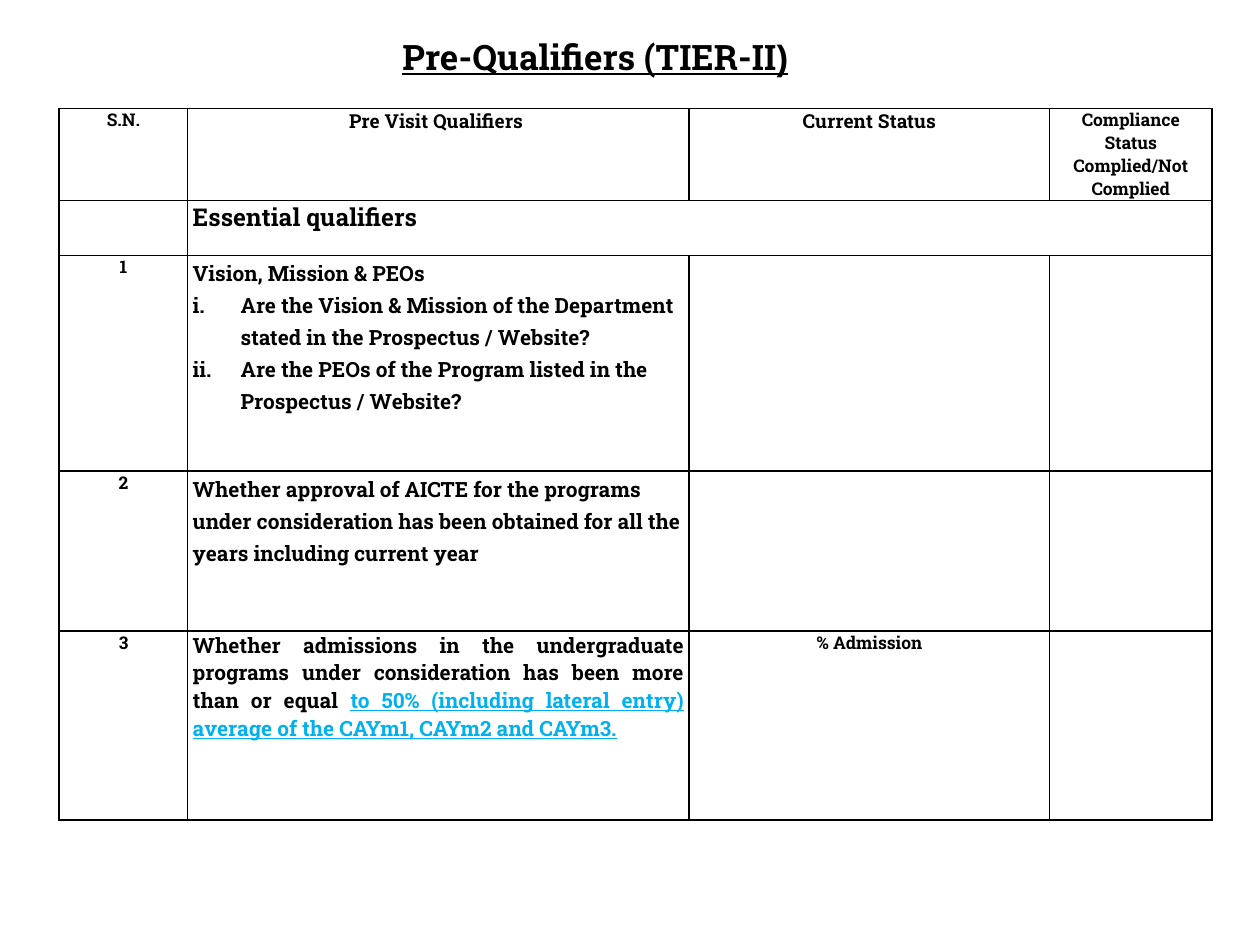
from lxml.etree import SubElement
from pptx import Presentation
from pptx.dml.color import RGBColor
from pptx.enum.text import MSO_ANCHOR, MSO_AUTO_SIZE, PP_ALIGN
from pptx.oxml import parse_xml
from pptx.oxml.ns import nsdecls, qn
from pptx.util import Inches, Pt

BLACK = RGBColor(0x00, 0x00, 0x00)
SKY_BLUE = RGBColor(0x00, 0xB0, 0xF0)
FONT = "Roboto Slab"
COLUMN_WIDTHS = (1.02, 3.98, 2.86, 1.29)
ROW_HEIGHTS = (0.73, 0.44, 1.71, 1.27, 1.5)
LIST_INDENT = Inches(0.38)


def add_run(paragraph, text, size, color=BLACK, underline=False, font=FONT):
    run = paragraph.add_run()
    run.text = text
    run.font.name = font
    run.font.size = Pt(size)
    run.font.bold = True
    run.font.underline = underline
    run.font.color.rgb = color


def number_paragraph(paragraph):
    """Give the paragraph a hanging lower-case Roman number."""
    properties = paragraph._p.get_or_add_pPr()
    properties.set("marL", str(LIST_INDENT))
    properties.set("indent", str(-LIST_INDENT))
    SubElement(properties, qn("a:buFont"), typeface="+mj-lt")
    SubElement(properties, qn("a:buAutoNum"), type="romanLcPeriod")


def format_cell(cell):
    """Clear the fill, tighten the margins and rule all four sides."""
    cell.fill.background()
    cell.margin_left = cell.margin_right = Inches(0.04)
    cell.margin_top = cell.margin_bottom = 0
    properties = cell._tc.get_or_add_tcPr()
    for position, side in enumerate(("lnL", "lnR", "lnT", "lnB")):
        properties.insert(position, parse_xml(
            f'<a:{side} {nsdecls("a")} w="{Pt(1)}"><a:solidFill>'
            f'<a:srgbClr val="{BLACK}"/></a:solidFill></a:{side}>'))


def write_cell(cell, lines, size, alignment=PP_ALIGN.CENTER, spacing=None):
    """Write one paragraph per line and return the paragraphs."""
    frame = cell.text_frame
    for index, line in enumerate(lines):
        paragraph = frame.add_paragraph() if index else frame.paragraphs[0]
        paragraph.alignment = alignment
        if spacing:
            paragraph.line_spacing = spacing
        add_run(paragraph, line, size)
    return frame.paragraphs


def add_title(slide, left, top, width, height):
    title = slide.shapes.title
    title.left, title.top, title.width, title.height = map(
        Inches, (left, top, width, height))
    frame = title.text_frame
    frame.auto_size = MSO_AUTO_SIZE.NONE
    frame.vertical_anchor = MSO_ANCHOR.TOP
    paragraph = frame.paragraphs[0]
    paragraph.alignment = PP_ALIGN.CENTER
    add_run(paragraph, "Pre-Qualifiers (TIER-II", 20, underline=True)
    add_run(paragraph, ")", 20, underline=True, font="Arial")


def add_qualifier_table(slide, left, top):
    shape = slide.shapes.add_table(
        len(ROW_HEIGHTS), len(COLUMN_WIDTHS), Inches(left), Inches(top),
        Inches(sum(COLUMN_WIDTHS)), Inches(sum(ROW_HEIGHTS)))
    table = shape.table
    table.first_row = table.horz_banding = False
    for column, width in zip(table.columns, COLUMN_WIDTHS):
        column.width = Inches(width)
    for row, height in zip(table.rows, ROW_HEIGHTS):
        row.height = Inches(height)
    for cell in table.iter_cells():
        format_cell(cell)

    # Header row
    headers = ((["S.N."], 10), (["Pre Visit Qualifiers "], 11),
               (["Current Status"], 11),
               (["Compliance Status", "Complied/Not Complied"], 10))
    for column, (lines, size) in enumerate(headers):
        write_cell(table.cell(0, column), lines, size)

    # Section row
    section = table.cell(1, 1)
    section.merge(table.cell(1, 3))
    write_cell(section, ["Essential qualifiers"], 14, PP_ALIGN.LEFT)

    # Serial numbers
    for number in range(1, 4):
        write_cell(table.cell(number + 1, 0), [str(number)], 10)

    # Qualifiers
    vision = write_cell(table.cell(2, 1), [
        "Vision, Mission & PEOs",
        "Are the Vision & Mission of the Department stated in the Prospectus / Website?",
        "Are the PEOs of the Program listed in the Prospectus / Website?",
    ], 12, PP_ALIGN.LEFT, 1.15)
    for paragraph in vision[1:]:
        number_paragraph(paragraph)
    write_cell(table.cell(3, 1), [
        "Whether approval of AICTE for the programs under consideration "
        "has been obtained for all the years including current year",
    ], 12, PP_ALIGN.LEFT, 1.15)
    admissions = write_cell(table.cell(4, 1), [
        "Whether admissions in the undergraduate programs under "
        "consideration has been more than or equal ",
    ], 12, PP_ALIGN.JUSTIFY)
    add_run(admissions[0], "to 50% (including lateral entry) average of the "
            "CAYm1, CAYm2 and CAYm3.", 12, SKY_BLUE, underline=True)

    # Current status
    write_cell(table.cell(4, 2), ["% Admission"], 10)


def main():
    presentation = Presentation()
    presentation.slide_width = Inches(10)
    presentation.slide_height = Inches(7.5)
    slide = presentation.slides.add_slide(presentation.slide_layouts[5])
    add_qualifier_table(slide, 0.47, 0.86)
    add_title(slide, 0, 0.23, 9.45, 0.74)
    presentation.save("out.pptx")


if __name__ == "__main__":
    main()
